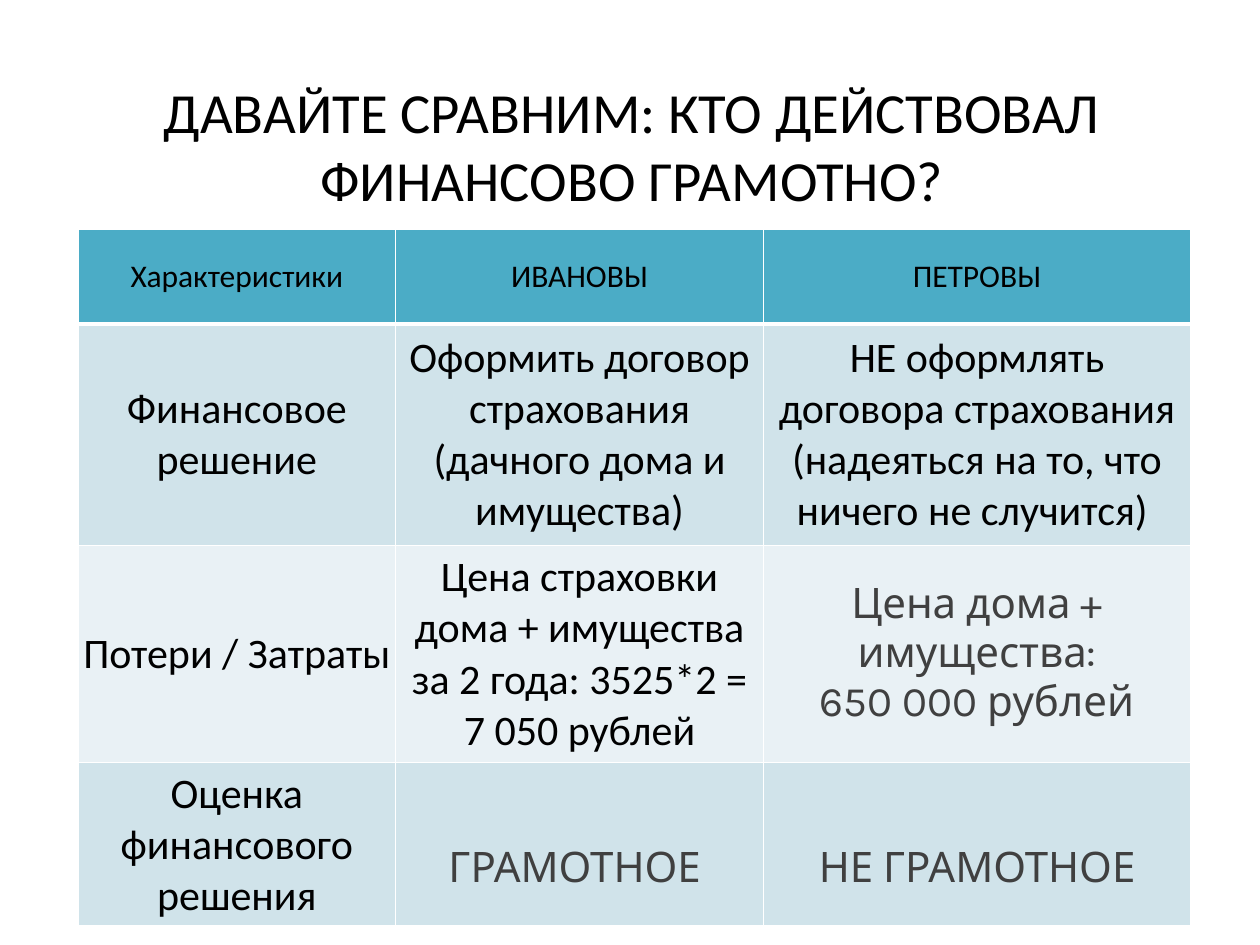
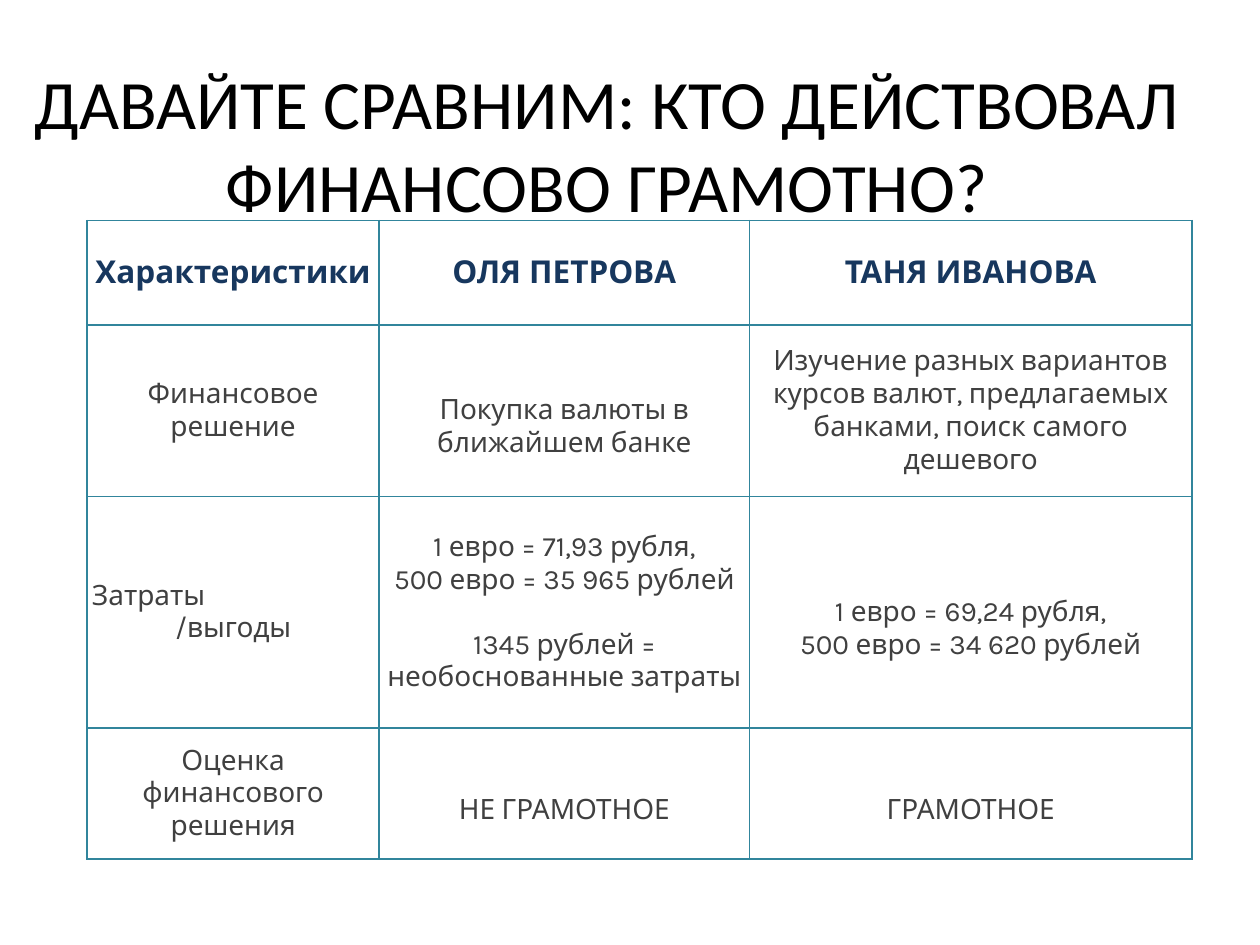
from dataclasses import dataclass

from lxml import etree
from pptx import Presentation
from pptx.dml.color import RGBColor
from pptx.enum.text import MSO_ANCHOR, PP_ALIGN
from pptx.oxml.ns import qn
from pptx.util import Inches, Pt

CENTER, LEFT = PP_ALIGN.CENTER, PP_ALIGN.LEFT
MIDDLE = MSO_ANCHOR.MIDDLE

# Shared look
SLIDE_WIDTH, SLIDE_HEIGHT = Inches(10), Inches(7.5)
UNIT = SLIDE_WIDTH / 100  # the page grid is 100 columns by 75 rows
BODY_FONT, ACCENT_FONT = "Calibri", "Karla"
BLACK, GREY, NAVY, WHITE = "000000", "404040", "17375E", "FFFFFF"
TEAL, TEAL_LINE = "4BACC6", "31859C"
BANDS = ("D0E3EA", "E9F1F5")
TITLE = "ДАВАЙТЕ СРАВНИМ: КТО ДЕЙСТВОВАЛ ФИНАНСОВО ГРАМОТНО?"
LINE_HEIGHT = 1.15


@dataclass
class Style:
    size: float
    font: str = BODY_FONT
    color: str = BLACK
    bold: bool = False


@dataclass
class Entry:
    """A table cell: one paragraph per line of text."""
    text: str
    style: Style
    lowered: bool = False  # sits half a line below the middle
    gap_before: int = -1   # paragraph set apart by one empty line
    left_line: int = -1    # paragraph aligned to the left


def grid(*counts):
    return [round(count * UNIT) for count in counts]


def rgb(color):
    return RGBColor.from_string(color)


def style_paragraph(para, style, align=CENTER):
    para.alignment = align
    font = para.font
    font.name, font.size, font.bold = style.font, Pt(style.size), style.bold
    font.color.rgb = rgb(style.color)


def add_title(page, place, size, drop=0):
    box = page.shapes.add_textbox(*grid(*place))
    frame = box.text_frame
    frame.word_wrap = True
    frame.vertical_anchor = MIDDLE
    frame.margin_top = Inches(0.05 + drop)
    frame.text = TITLE
    style_paragraph(frame.paragraphs[0], Style(size))


def set_borders(cell, color, bottom=1):
    properties = cell._tc.get_or_add_tcPr()
    sides = (("a:lnL", 1), ("a:lnR", 1), ("a:lnT", 1), ("a:lnB", bottom))
    for position, (side, width) in enumerate(sides):
        line = etree.Element(qn(side), w=str(Pt(width)))
        fill = etree.SubElement(line, qn("a:solidFill"))
        etree.SubElement(fill, qn("a:srgbClr"), val=color)
        properties.insert(position, line)


def fill_cell(cell, entry):
    style = entry.style
    line = Pt(style.size * LINE_HEIGHT)
    cell.vertical_anchor = MIDDLE
    cell.margin_left = cell.margin_right = Inches(0.04)
    cell.margin_top = Inches(0.05) + (line if entry.lowered else 0)
    cell.margin_bottom = Inches(0.05)
    cell.text = entry.text
    for index, para in enumerate(cell.text_frame.paragraphs):
        if index == entry.gap_before:
            para.space_before = line
        align = LEFT if index == entry.left_line else CENTER
        style_paragraph(para, style, align)


def add_comparison(page, corner, widths, heights, rows, border, fills=None,
                   header_rule=1):
    place = grid(*corner, sum(widths), sum(heights))
    table = page.shapes.add_table(len(rows), len(widths), *place).table
    table.first_row = table.horz_banding = False
    for column, width in zip(table.columns, grid(*widths)):
        column.width = width
    for row, height in zip(table.rows, grid(*heights)):
        row.height = height
    for r, entries in enumerate(rows):
        for c, entry in enumerate(entries):
            cell = table.cell(r, c)
            fill_cell(cell, entry)
            if fills:
                cell.fill.solid()
                cell.fill.fore_color.rgb = rgb(fills[r])
            else:
                cell.fill.background()
            # Both cells along the header rule carry the same width
            set_borders(cell, border, header_rule if r == 0 else 1)


def add_insurance_page(page):
    head, body = Style(18), Style(24)
    accent = Style(24, ACCENT_FONT, GREY)
    names = ("Характеристики", "ИВАНОВЫ", "ПЕТРОВЫ")
    rows = [
        [Entry(name, head) for name in names],
        [Entry("Финансовое решение", body),
         Entry("Оформить договор страхования (дачного дома и имущества)", body),
         Entry("НЕ оформлять договора страхования (надеяться на то, "
               "что ничего не случится) ", body)],
        [Entry("Потери / Затраты", body),
         Entry("Цена страховки дома + имущества за 2 года: 3525*2 = "
               "7 050 рублей", body),
         Entry("Цена дома + имущества:\n650 000 рублей", accent)],
        [Entry("Оценка финансового решения", body),
         Entry("ГРАМОТНОЕ ", accent, lowered=True),
         Entry("НЕ ГРАМОТНОЕ", accent, lowered=True)],
    ]
    add_title(page, (5.1, 5.2, 90.1, 11), 32.4, drop=0.16)
    add_comparison(page, (6.2, 18.2), (25.2, 29.2, 33.9),
                   (7.5, 17.6, 17.2, 13), rows, WHITE,
                   (TEAL, BANDS[0], BANDS[1], BANDS[0]), header_rule=3)


def add_currency_page(page):
    head = Style(18, ACCENT_FONT, NAVY, bold=True)
    body = Style(16, ACCENT_FONT, GREY)
    names = ("Характеристики", "ОЛЯ ПЕТРОВА", "ТАНЯ ИВАНОВА")
    rows = [
        [Entry(name, head) for name in names],
        [Entry("Финансовое решение", body),
         Entry("Покупка валюты в ближайшем банке", body, lowered=True),
         Entry("Изучение разных вариантов курсов валют, предлагаемых "
               "банками, поиск самого дешевого", body)],
        [Entry("Затраты\n/выгоды", body, left_line=0),
         Entry("1 евро = 71,93 рубля,\n500 евро = 35 965 рублей\n"
               "1345 рублей = необоснованные затраты", body, gap_before=2),
         Entry("1 евро = 69,24 рубля,\n500 евро = 34 620 рублей", body,
               lowered=True)],
        [Entry("Оценка финансового решения", body),
         Entry("НЕ ГРАМОТНОЕ", body, lowered=True),
         Entry("ГРАМОТНОЕ", body, lowered=True)],
    ]
    add_title(page, (1.2, 2.9, 93.9, 16.9), 39.6)
    add_comparison(page, (6.9, 17.5), (23.2, 29.4, 35.1),
                   (8.3, 13.6, 18.4, 10.4), rows, TEAL_LINE)


def main():
    deck = Presentation()
    deck.slide_width, deck.slide_height = SLIDE_WIDTH, SLIDE_HEIGHT
    blank = deck.slide_layouts[6]
    for add_content in (add_insurance_page, add_currency_page):
        add_content(deck.slides.add_slide(blank))
    deck.save("out.pptx")


if __name__ == "__main__":
    main()
